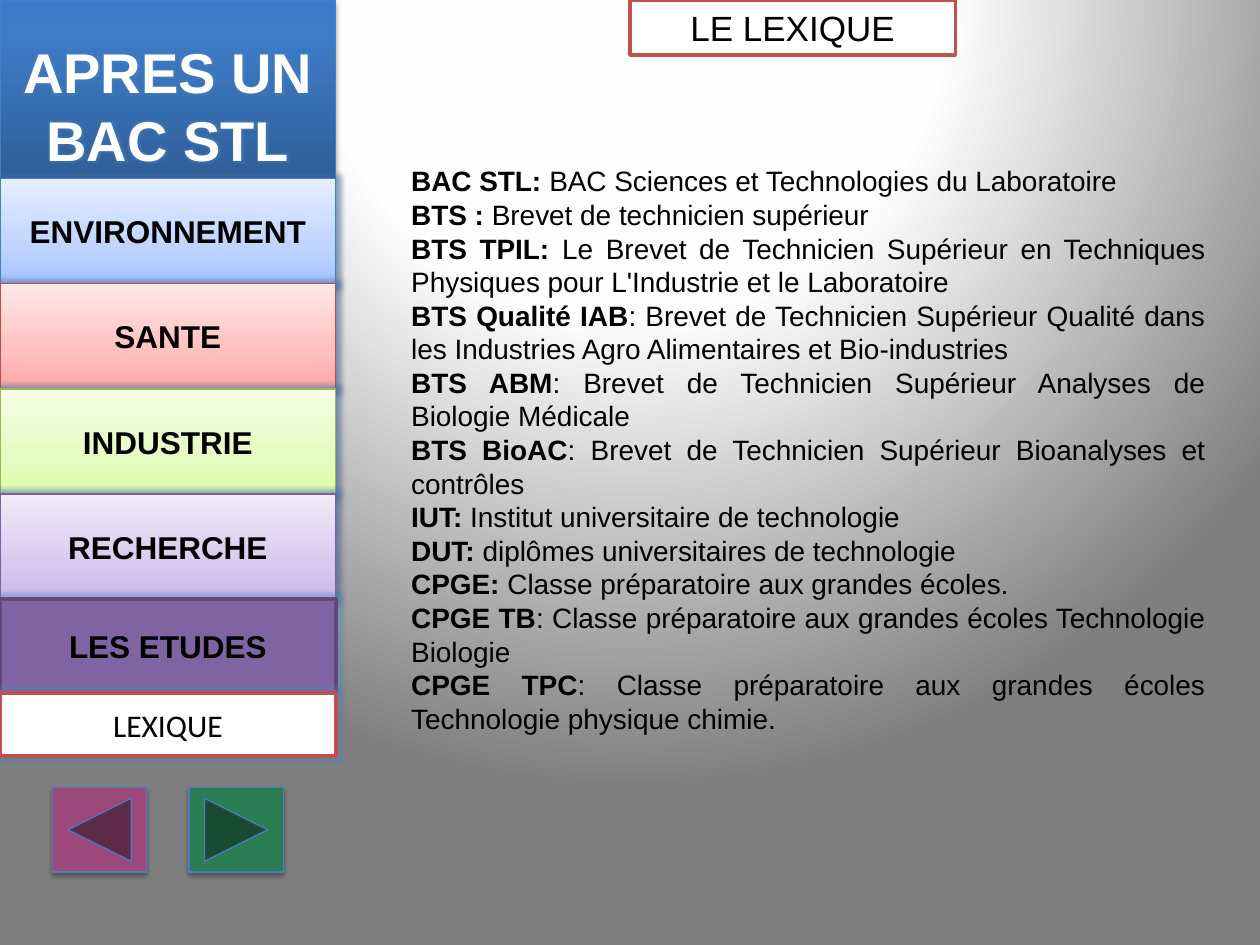
from lxml import etree
from pptx import Presentation
from pptx.dml.color import RGBColor
from pptx.enum import shapes, text
from pptx.oxml.ns import qn
from pptx.util import Cm, Pt

KIND = shapes.MSO_SHAPE
MID, LOW, TOP = (text.MSO_ANCHOR.MIDDLE, text.MSO_ANCHOR.BOTTOM, text.MSO_ANCHOR.TOP)
ALIGN = text.PP_ALIGN

MENU = [
    ("ENVIRONNEMENT", ["A4C4FF", "BFD4FF", "E6EEFF"], "4B7EBC"),
    ("SANTE", ["FFA6A5", "FFC0BF", "FFE7E7"], "BF4C48"),
    ("INDUSTRIE", ["DAFDA7", "E4FCC2", "F5FFE7"], "98B955"),
    ("RECHERCHE", ["C9B5E8", "D8CBEE", "F0EAF9"], "7D60A0"),
]

TERMS = [
    ("BAC STL: ", "BAC Sciences et Technologies du Laboratoire"),
    ("BTS : ", "Brevet de technicien supérieur"),
    ("BTS TPIL: ", "Le Brevet de Technicien Supérieur en Techniques Physiques pour L'Industrie et le Laboratoire"),
    ("BTS Qualité IAB", ": Brevet de Technicien Supérieur Qualité dans les Industries Agro Alimentaires et Bio-industries"),
    ("BTS ABM", ": Brevet de Technicien Supérieur Analyses de Biologie Médicale"),
    ("BTS BioAC", ": Brevet de Technicien Supérieur Bioanalyses et contrôles"),
    ("IUT: ", "Institut universitaire de technologie"),
    ("DUT: ", "diplômes universitaires de technologie"),
    ("CPGE: ", "Classe préparatoire aux grandes écoles."),
    ("CPGE TB", ": Classe préparatoire aux grandes écoles Technologie Biologie"),
    ("CPGE TPC", ": Classe préparatoire aux grandes écoles Technologie physique chimie."),
]


def tint(code):
    return RGBColor.from_string(code)


def node(parent, tag, **attrs):
    return etree.SubElement(parent, qn(tag), {k: str(v) for k, v in attrs.items()})


def blend(grad, stops):
    for child in list(grad):
        grad.remove(child)
    group = node(grad, "a:gsLst")
    for pos, code in stops:
        stop = node(group, "a:gs", pos=pos * 1000)
        node(stop, "a:srgbClr", val=code)


def glow(effects, code, size, alpha):
    halo = node(effects, "a:glow", rad=Pt(size))
    node(node(halo, "a:srgbClr", val=code), "a:alpha", val=alpha * 1000)


def shade(effects, alpha, dist):
    drop = node(effects, "a:outerShdw", blurRad=Pt(3.1), dist=Pt(dist),
                dir=5400000, rotWithShape=0)
    node(node(drop, "a:srgbClr", val="000000"), "a:alpha", val=alpha * 1000)


def block(slide, kind, box, fill, line, width=0.75):
    shape = slide.shapes.add_shape(kind, *map(Cm, box))
    if isinstance(fill, str):
        shape.fill.solid()
        shape.fill.fore_color.rgb = tint(fill)
    else:
        shape.fill.gradient()
        grad = shape._element.spPr.find(qn("a:gradFill"))
        blend(grad, fill)
        node(grad, "a:lin", ang=16200000, scaled=0)
    shape.line.color.rgb = tint(line)
    shape.line.width = Pt(width)
    shape.shadow.inherit = False
    return shape, shape._element.spPr.find(qn("a:effectLst"))


def style(run, **look):
    base = {"name": "Arial", "size": Pt(18), "bold": False}
    for key, value in {**base, **look}.items():
        setattr(run.font, key, value)
    run.font.color.rgb = tint("000000")


def label(shape, words, anchor=MID, **look):
    frame = shape.text_frame
    for key, value in {"word_wrap": True, "vertical_anchor": anchor}.items():
        setattr(frame, key, value)
    para = frame.paragraphs[0]
    para.alignment = ALIGN.CENTER
    run = para.add_run()
    run.text = words
    style(run, **look)
    return run


def backdrop(slide):
    slide.background.fill.gradient()
    grad = slide._element.find(".//" + qn("a:gradFill"))
    blend(grad, [(0, "FFFFFF"), (40, "FEFEFE"), (100, "7F7F7F")])
    way = node(grad, "a:path", path="circle")
    node(way, "a:fillToRect", l=50000, t=-80000, r=50000, b=180000)


def banner(slide, box):
    fill = [(0, "2F5F99"), (80, "3D7CC7"), (100, "3A7CCB")]
    shape, effects = block(slide, KIND.RECTANGLE, box, fill, "4B7EBC")
    shade(effects, 35, 1.8)
    run = label(shape, "APRES UN BAC STL", LOW, size=Pt(32), bold=True)
    run.font.color.rgb = tint("FFFFFF")
    halo = etree.Element(qn("a:effectLst"))
    glow(halo, "4F81BD", 5, 40)
    run.font._element.find(qn("a:solidFill")).addnext(halo)


def menu(slide, box):
    left, top, wide, high = box
    kind = KIND.ACTION_BUTTON_CUSTOM
    step = 2.12
    for i, (words, codes, line) in enumerate(MENU):
        spot = (left, top + i * step, wide, step)
        fill = list(zip((0, 35, 100), codes))
        shape, effects = block(slide, kind, spot, fill, line)
        glow(effects, "4F81BD", 5, 40)
        shade(effects, 38, 1.6)
        label(shape, words, bold=True)
    last = 1.27
    base = top + len(MENU) * step
    ends = [
        ("LES ETUDES", base, high - len(MENU) * step - last, "8064A2", "5F4A78",
         {"bold": True}),
        ("LEXIQUE", top + high - last, last, "FFFFFF", "C0504D",
         {"name": "Calibri"}),
    ]
    for words, y, tall, fill, line, look in ends:
        shape, effects = block(slide, kind, (left, y, wide, tall), fill, line, 2)
        glow(effects, "4F81BD", 5, 40)
        label(shape, words, **look)


def arrows(slide, box):
    left, top, wide, high = box
    size = 1.9
    pair = [
        (KIND.ACTION_BUTTON_BACK_OR_PREVIOUS, left, "9C487A"),
        (KIND.ACTION_BUTTON_FORWARD_OR_NEXT, left + wide - size, "2A7D55"),
    ]
    for kind, x, fill in pair:
        _, effects = block(slide, kind, (x, top, size, high), fill, "4B7EBC")
        shade(effects, 35, 1.8)


def heading(slide, box):
    shape, _ = block(slide, KIND.RECTANGLE, box, "FFFFFF", "C0504D", 2)
    label(shape, "LE LEXIQUE", TOP, size=Pt(20))


def terms(slide, box):
    frame = slide.shapes.add_textbox(*map(Cm, box)).text_frame
    frame.word_wrap = True
    for i, pair in enumerate(TERMS):
        para = frame.add_paragraph() if i else frame.paragraphs[0]
        para.alignment = ALIGN.JUSTIFY
        for words, bold in zip(pair, (True, False)):
            run = para.add_run()
            run.text = words
            style(run, size=Pt(16), bold=bold)


def main():
    deck = Presentation()
    deck.slide_width, deck.slide_height = Cm(25.4), Cm(19.05)
    slide = deck.slides.add_slide(deck.slide_layouts[6])
    backdrop(slide)
    banner(slide, (0, 0, 6.77, 3.6))
    arrows(slide, (1.06, 15.88, 4.65, 1.7))
    menu(slide, (0, 3.6, 6.77, 11.64))
    heading(slide, (12.7, 0, 6.56, 1.11))
    terms(slide, (8.04, 3.18, 16.51, 13.41))
    deck.save("out.pptx")


if __name__ == "__main__":
    main()
